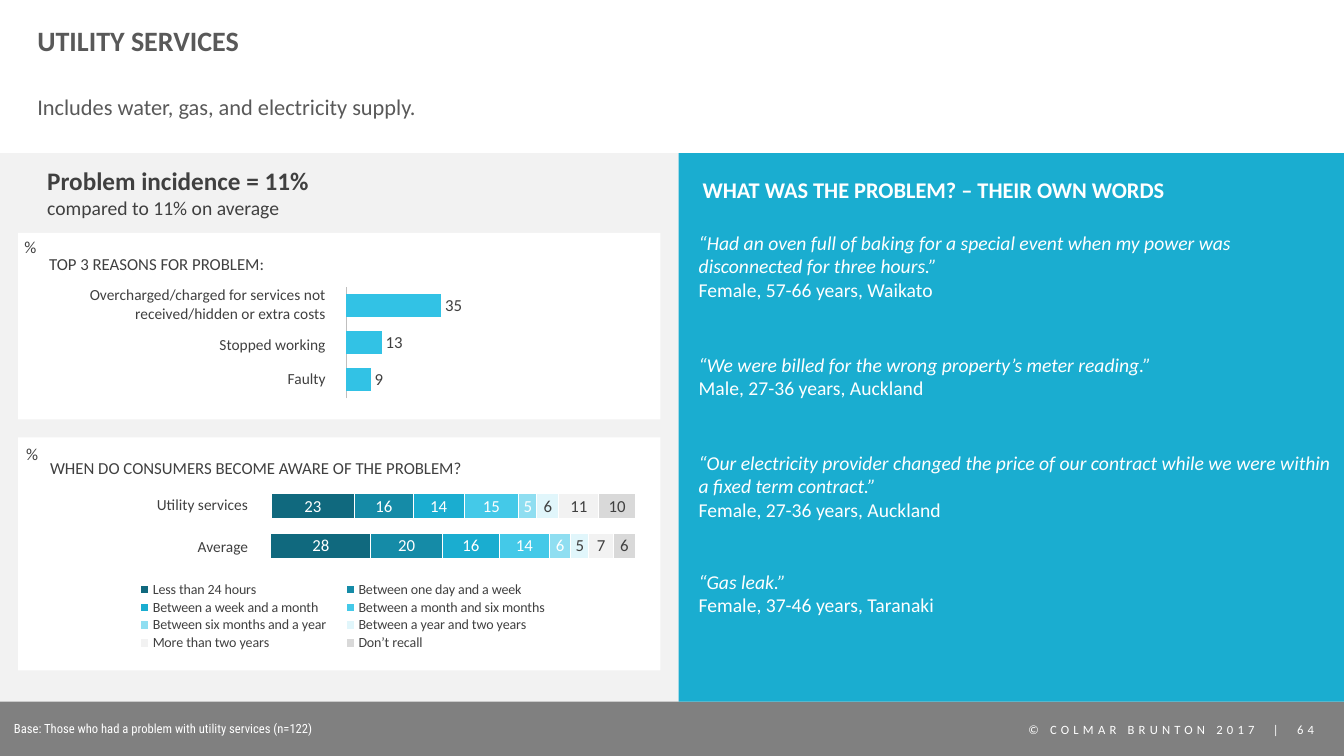
from dataclasses import dataclass

from lxml import etree
from pptx import Presentation
from pptx.chart import data as chart_data
from pptx.dml.color import RGBColor
from pptx.enum import chart as chart_enum, shapes, text
from pptx.oxml import ns
from pptx.util import Inches, Pt


@dataclass(frozen=True)
class Theme:
    font: str = "Calibri"
    note_font: str = "Roboto Condensed"
    white: str = "FFFFFF"
    grey: str = "808080"
    pale: str = "F2F2F2"
    heading: str = "595959"
    ink: str = "404040"
    axis: str = "BFBFBF"
    teal: str = "1AADD0"
    bar: str = "32C2E5"
    scale: tuple = ("10697E", "158BA7", "1AADD0", "44C9E8",
                    "8FDEF1", "E1F6FB", "F2F2F2", "D9D9D9")
    title: int = 20
    lead: int = 18
    subtitle: int = 16
    body: int = 14
    label: int = 12
    row: int = 11
    legend: int = 10
    note: int = 9


THEME = Theme()
LEFT, CENTER, RIGHT = text.PP_ALIGN.LEFT, text.PP_ALIGN.CENTER, text.PP_ALIGN.RIGHT
TIMES = ["Less than 24 hours", "Between one day and a week",
         "Between a week and a month", "Between a month and six months",
         "Between six months and a year", "Between a year and two years",
         "More than two years", "Don’t recall"]
REASONS = [("Overcharged/charged for services not received/hidden or extra costs", 35, 0.52),
           ("Stopped working", 13, 0.29), ("Faulty", 9, 0.39)]
QUOTES = [
    (0.77, "“Had an oven full of baking for a special event when my power was "
           "disconnected for three hours.”", "Female, 57-66 years, Waikato"),
    (1.98, "“We were billed for the wrong property’s meter reading.”",
     "Male, 27-36 years, Auckland"),
    (2.95, "“Our electricity provider changed the price of our contract while we were "
           "within a fixed term contract.”", "Female, 27-36 years, Auckland"),
    (4.13, "“Gas leak.”", "Female, 37-46 years, Taranaki"),
]


def style(font, size, color, bold=False, italic=False, name=THEME.font):
    font.name, font.size, font.bold, font.italic = name, Pt(size), bold, italic
    font.color.rgb = RGBColor.from_string(color)


def add_run(paragraph, words, size, color, **options):
    run = paragraph.add_run()
    run.text = words
    style(run.font, size, color, **options)
    return run


def clear_margins(frame):
    frame.margin_left = frame.margin_top = frame.margin_right = frame.margin_bottom = 0


def add_panel(slide, box, color):
    panel = slide.shapes.add_shape(shapes.MSO_SHAPE.RECTANGLE, *map(Inches, box))
    panel.shadow.inherit = False
    panel.fill.solid()
    panel.fill.fore_color.rgb = RGBColor.from_string(color)
    panel.line.fill.background()


def add_box(slide, box, wrap=False, align=LEFT):
    frame = slide.shapes.add_textbox(*map(Inches, box)).text_frame
    frame.word_wrap = wrap
    frame.paragraphs[0].alignment = align
    return frame


def add_label(slide, box, words, size=THEME.label, color=THEME.ink, align=CENTER, **options):
    paragraph = add_box(slide, box, align=align).paragraphs[0]
    return add_run(paragraph, words, size, color, **options)


def set_layout(element, index, box, inner=False):
    """Place a plot area or legend by fractions of its chart."""
    for old in element.findall(ns.qn("c:layout")):
        element.remove(old)
    layout = etree.Element(ns.qn("c:layout"))
    manual = etree.SubElement(layout, ns.qn("c:manualLayout"))
    settings = [("layoutTarget", "inner")] if inner else []
    settings += [("xMode", "edge"), ("yMode", "edge"), *zip("xywh", map(str, box))]
    for tag, value in settings:
        etree.SubElement(manual, ns.qn(f"c:{tag}")).set("val", value)
    element.insert(index, layout)


def add_bar_chart(slide, box, kind, categories, series, gap, plot_box):
    values = chart_data.CategoryChartData()
    values.categories = categories
    for name, numbers in series:
        values.add_series(name, numbers)
    chart = slide.shapes.add_chart(kind, *map(Inches, box), values).chart
    style(chart.font, THEME.legend, THEME.ink)
    chart.has_title = chart.has_legend = False
    chart.value_axis.has_major_gridlines = False
    chart.value_axis.visible = False
    plot = chart.plots[0]
    plot.gap_width = gap
    plot.vary_by_categories = False
    # Transparent chart background
    space = chart.element
    background = etree.Element(ns.qn("c:spPr"))
    etree.SubElement(background, ns.qn("a:noFill"))
    line = etree.SubElement(background, ns.qn("a:ln"))
    etree.SubElement(line, ns.qn("a:noFill"))
    space.find(ns.qn("c:chart")).addnext(background)
    set_layout(space.find(".//" + ns.qn("c:plotArea")), 0, plot_box, inner=True)
    return chart


def format_series(series, fill, label_color, position):
    series.format.fill.solid()
    series.format.fill.fore_color.rgb = RGBColor.from_string(fill)
    labels = series.data_labels
    labels.show_value = True
    labels.position = position
    style(labels.font, THEME.label, label_color)


def add_timing_chart(slide, box, values, plot_box, legend_box=None):
    chart = add_bar_chart(slide, box, chart_enum.XL_CHART_TYPE.BAR_STACKED_100, ["1"],
                          [(name, [value]) for name, value in zip(TIMES, values)],
                          89, plot_box)
    chart.plots[0].overlap = 100
    chart.category_axis.visible = False
    chart.value_axis.maximum_scale = 1
    for index, series in enumerate(chart.plots[0].series):
        format_series(series, THEME.scale[index], THEME.white if index < 5 else THEME.ink,
                      chart_enum.XL_LABEL_POSITION.CENTER)
        series.format.line.color.rgb = RGBColor.from_string(THEME.white)
        series.format.line.width = Pt(0.75 if index == 6 else 0)
    if legend_box:
        chart.has_legend = True
        chart.legend.position = chart_enum.XL_LEGEND_POSITION.RIGHT
        chart.legend.include_in_layout = False
        style(chart.legend.font, THEME.legend, THEME.ink)
        set_layout(chart.element.find(".//" + ns.qn("c:legend")), 1, legend_box)


def add_header(slide, box):
    x, y, width, _ = box
    title = slide.shapes.title
    title.left, title.top, title.width, title.height = map(Inches, (x, y, 10.77, 0.62))
    subtitle = add_box(slide, (x, y + 0.84, width, 0.24), wrap=True)
    for frame, words, size, bold in (
            (title.text_frame, "UTILITY SERVICES", THEME.title, True),
            (subtitle, "Includes water, gas, and electricity supply.", THEME.subtitle, False)):
        clear_margins(frame)
        frame.auto_size = text.MSO_AUTO_SIZE.NONE
        paragraph = frame.paragraphs[0]
        paragraph.alignment = LEFT
        paragraph.line_spacing = 0.9
        add_run(paragraph, words, size, THEME.heading, bold=bold)
    title.text_frame.vertical_anchor = text.MSO_ANCHOR.MIDDLE


def add_incidence(slide, box):
    paragraph = add_box(slide, box).paragraphs[0]
    add_run(paragraph, "Problem incidence = 11%", THEME.lead, THEME.ink, bold=True)
    paragraph.add_line_break()
    add_run(paragraph, "compared to 11% on average", THEME.body, THEME.ink)


def add_reasons(slide, box):
    x, y, _, _ = box
    add_panel(slide, box, THEME.white)
    add_label(slide, (x - 0.04, y - 0.01, 0.32, 0.3), "%")
    add_label(slide, (x + 0.19, y + 0.16, 2.37, 0.3), "TOP 3 REASONS FOR PROBLEM:")
    # Reason names
    table = slide.shapes.add_table(len(REASONS), 1, *map(Inches, (x, y + 0.45, 3.15, 1.2))).table
    table.first_row = table.horz_banding = False
    for index, (reason, _, height) in enumerate(REASONS):
        table.rows[index].height = Inches(height)
        cell = table.cell(index, 0)
        cell.fill.background()
        cell.vertical_anchor = text.MSO_ANCHOR.MIDDLE
        paragraph = cell.text_frame.paragraphs[0]
        paragraph.alignment = RIGHT
        add_run(paragraph, reason, THEME.row, THEME.ink)
    # Reason bars
    chart = add_bar_chart(slide, (x + 3.2, y + 0.5, 2.77, 1.19),
                          chart_enum.XL_CHART_TYPE.BAR_CLUSTERED, ["1", "2", "3"],
                          [("Series 1", [value for _, value, _ in REASONS])],
                          57, (0.02, 0.03, 0.97, 0.93))
    chart.value_axis.minimum_scale, chart.value_axis.maximum_scale = 0, 100
    axis = chart.category_axis
    axis.reverse_order = True
    axis.tick_label_position = chart_enum.XL_TICK_LABEL_POSITION.NONE
    axis.major_tick_mark = chart_enum.XL_TICK_MARK.NONE
    axis.format.line.color.rgb = RGBColor.from_string(THEME.axis)
    axis.format.line.width = Pt(0.75)
    format_series(chart.plots[0].series[0], THEME.bar, THEME.ink,
                  chart_enum.XL_LABEL_POSITION.OUTSIDE_END)


def add_awareness(slide, box):
    x, y, _, _ = box
    add_panel(slide, box, THEME.white)
    add_label(slide, (x - 0.02, y + 0.01, 0.32, 0.3), "%")
    add_label(slide, (x + 0.19, y + 0.15, 4.34, 0.3),
              "WHEN DO CONSUMERS BECOME AWARE OF THE PROBLEM?")
    add_timing_chart(slide, (x, y + 0.23, 6.35, 1.39), [23, 16, 14, 15, 5, 6, 11, 10],
                     (0.395, 0.159, 0.569, 0.334))
    add_timing_chart(slide, (x - 0.02, y + 0.76, 6.35, 1.39), [28, 20, 16, 14, 6, 5, 7, 6],
                     (0.398, 0.06, 0.569, 0.334), (0.17, 0.47, 0.68, 0.52))
    for name, top in (("Utility services", 0.52), ("Average", 0.94)):
        add_label(slide, (x + 1.27, y + top, 1.11, 0.29), name, THEME.row, align=RIGHT)


def add_quotes(slide, box):
    x, y, _, _ = box
    add_panel(slide, box, THEME.teal)
    add_label(slide, (x + 0.11, y + 0.18, 4.84, 0.37),
              "WHAT WAS THE PROBLEM? – THEIR OWN WORDS", THEME.subtitle, THEME.white, bold=True)
    for top, quote, speaker in QUOTES:
        frame = add_box(slide, (x + 0.2, y + top, 6.33, 0.75), wrap=True)
        clear_margins(frame)
        add_run(frame.paragraphs[0], quote, THEME.body, THEME.white, italic=True)
        add_run(frame.add_paragraph(), speaker, THEME.body, THEME.white)


def add_footer(slide, box):
    x, y, _, _ = box
    add_panel(slide, box, THEME.grey)
    add_label(slide, (x + 0.04, y + 0.15, 11.53, 0.25),
              "Base: Those who had a problem with utility services (n=122)",
              THEME.note, THEME.white, LEFT, name=THEME.note_font)
    mark = add_label(slide, (x + 9.79, y + 0.16, 3.65, 0.25), "© COLMAR BRUNTON 2017  |  64",
                     THEME.note, THEME.white)
    mark.font._element.set("spc", "300")


def main():
    presentation = Presentation()
    presentation.slide_width, presentation.slide_height = Inches(13.33), Inches(7.5)
    slide = presentation.slides.add_slide(presentation.slide_layouts[5])
    add_footer(slide, (0, 6.95, 13.33, 0.55))
    add_header(slide, (0.37, 0.11, 12.68, 1.08))
    add_panel(slide, (0, 1.52, 13.33, 5.44), THEME.pale)
    add_incidence(slide, (0.37, 1.59, 2.87, 0.64))
    add_reasons(slide, (0.18, 2.31, 6.37, 1.85))
    add_awareness(slide, (0.18, 4.34, 6.37, 2.31))
    add_quotes(slide, (6.73, 1.52, 6.6, 5.44))
    presentation.save("out.pptx")


if __name__ == "__main__":
    main()
